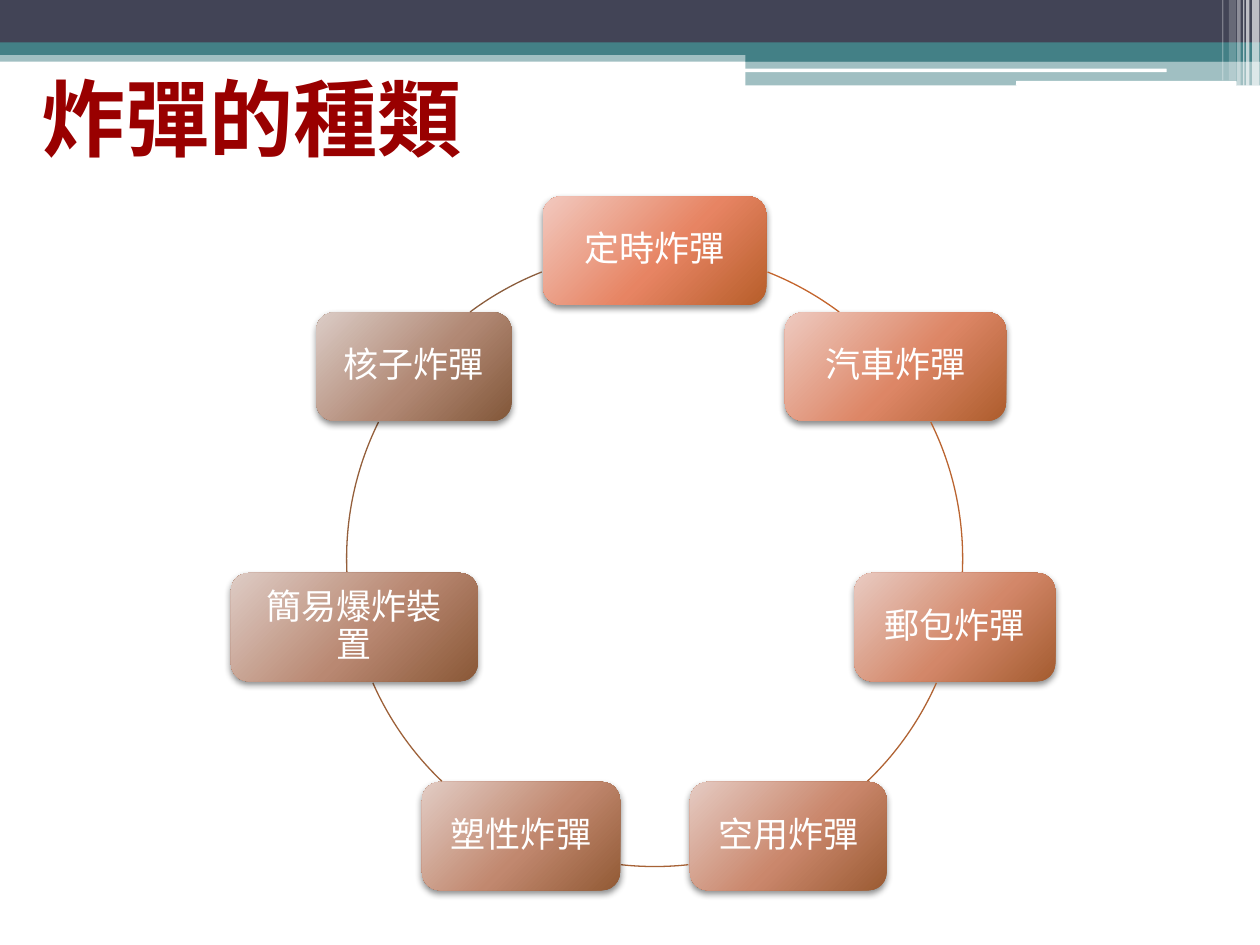
from math import cos, radians, sin

from lxml.etree import SubElement
from pptx import Presentation
from pptx.dml.color import RGBColor
from pptx.enum.shapes import MSO_SHAPE
from pptx.enum.text import MSO_ANCHOR, PP_ALIGN
from pptx.oxml.ns import qn
from pptx.util import Pt

COLORS = {"navy": "424456", "teal": "438086", "white": "FFFFFF", "title": "990000", "shadow": "000000"}
TITLE = "炸彈的種類"

# left, top, width, height, color, opacity in percent
HEADER_BARS = [
    (0, 28.8, 720, 6.5, "teal", 50),
    (0, 0, 720, 24.5, "navy", 100),
    (0, 24.2, 720, 7.2, "teal", 100),
    (426, 28, 294, 7.2, "teal", 100),
    (426, 34.6, 294, 14.2, "teal", 50),
]
HEADER_GAPS = [(425.5, 39.2, 241.2, 2), (580.6, 46.2, 126, 2.8)]
HEADER_STRIPES = [
    (715.5, 0, 4.2, 49, "white", 65),
    (712, 0, 2, 49, "white", 65),
    (710.4, 0, 0.8, 49, "white", 60),
    (707, 0, 2, 49, "white", 40),
    (702.2, 0, 4.2, 46, "white", 20),
    (698.4, 0, 0.8, 46, "white", 30),
]

# text, card width, gradient colors, color of the arc after the card, arc start and end
# (degrees clockwise from the top)
BOMB_TYPES = [
    ("定時炸彈", 127.6, ("F2C9BF", "E78463", "B75E2A"), "C4652D", 21.5, 36.8),
    ("汽車炸彈", 126.4, ("EECAC0", "DD8666", "AD5D2D"), "BA6430", 63.7, 92.5),
    ("郵包炸彈", 114.8, ("E9CBC2", "D38769", "A45C30"), "B06333", 113.8, 136.3),
    ("空用炸彈", 112.4, ("E5CBC3", "CA876C", "9B5B33"), "A66236", 173.7, 186.3),
    ("塑性炸彈", 113.2, ("E2CCC4", "C1886F", "925A35"), "9D6139", 223.7, 246.2),
    ("簡易爆炸裝置", 141.2, ("DECCC5", "B98872", "8A5837"), "945F3B", 267.5, 296.3),
    ("核子炸彈", 111.6, ("DBCCC6", "B18874", "825739"), "8B5D3D", 323.2, 338.5),
]
RING = {"x": 374.1, "y": 319.2, "radius": 176}
CARD_HEIGHT = 62
GRADIENT_STOPS = (0, 55000, 100000)
GRADIENT_FOCUS = {"l": "-40000", "t": "-90000", "r": "140000", "b": "190000"}


def set_format(target, values):
    for name, value in values.items():
        setattr(target, name, value)


def add_color(parent, color, opacity=100):
    element = SubElement(parent, qn("a:srgbClr"), val=color)
    if opacity < 100:
        SubElement(element, qn("a:alpha"), val=str(opacity * 1000))


def add_plain_shape(slide, kind, left, top, width, height):
    """Add a preset shape without shadow or outline."""
    shape = slide.shapes.add_shape(kind, Pt(left), Pt(top), Pt(width), Pt(height))
    shape.shadow.inherit = False
    shape.line.fill.background()
    return shape


def add_bar(slide, left, top, width, height, color, opacity, kind=MSO_SHAPE.RECTANGLE):
    bar = add_plain_shape(slide, kind, left, top, width, height)
    bar.fill.solid()
    bar.fill.fore_color.rgb = RGBColor.from_string(COLORS[color])
    if opacity < 100:
        color_element = bar._element.spPr.find(qn("a:solidFill"))[0]
        SubElement(color_element, qn("a:alpha"), val=str(opacity * 1000))


def write_text(shape, text, frame_format, paragraph_format, font_format, color):
    set_format(shape.text_frame, frame_format)
    paragraph = shape.text_frame.paragraphs[0]
    set_format(paragraph, paragraph_format)
    run = paragraph.add_run()
    run.text = text
    set_format(run.font, font_format)
    run.font.color.rgb = RGBColor.from_string(COLORS[color])
    return run


def add_title(slide):
    box = slide.shapes.add_textbox(Pt(16.6), Pt(33.8), Pt(257), Pt(65.5))
    font = {"name": "Noto Sans CJK SC", "size": Pt(48), "bold": True}
    frame = {"vertical_anchor": MSO_ANCHOR.MIDDLE, "word_wrap": False}
    run = write_text(box, TITLE, frame, {}, font, "title")
    SubElement(run.font._element, qn("a:ea"), typeface=font["name"])


def fill_with_glow(shape, colors):
    """Fill with a round gradient that spreads from above the left edge."""
    shape.fill.gradient()
    gradient = shape._element.spPr.find(qn("a:gradFill"))
    for child in list(gradient):
        gradient.remove(child)
    stops = SubElement(gradient, qn("a:gsLst"))
    for position, color in zip(GRADIENT_STOPS, colors):
        add_color(SubElement(stops, qn("a:gs"), pos=str(position)), color)
    shade = SubElement(gradient, qn("a:path"), {"path": "circle"})
    SubElement(shade, qn("a:fillToRect"), GRADIENT_FOCUS)


def add_drop_shadow(shape):
    effects = shape._element.spPr.find(qn("a:effectLst"))
    shadow = SubElement(effects, qn("a:outerShdw"), blurRad=str(Pt(4)), dist=str(Pt(2)),
                        dir="5400000", rotWithShape="0")
    add_color(shadow, COLORS["shadow"], 45)


def add_card(slide, text, width, colors, angle):
    center_x = RING["x"] + RING["radius"] * sin(radians(angle))
    center_y = RING["y"] - RING["radius"] * cos(radians(angle))
    card = add_plain_shape(slide, MSO_SHAPE.ROUNDED_RECTANGLE, center_x - width / 2,
                           center_y - CARD_HEIGHT / 2, width, CARD_HEIGHT)
    fill_with_glow(card, colors)
    add_drop_shadow(card)
    frame = {"vertical_anchor": MSO_ANCHOR.MIDDLE, "word_wrap": True}
    frame |= {f"margin_{side}": Pt(8.6) for side in ("left", "top", "right", "bottom")}
    write_text(card, text, frame, {"alignment": PP_ALIGN.CENTER, "line_spacing": 0.9},
               {"name": "Cambria", "size": Pt(20)}, "white")


def add_ring_arc(slide, start, end, color):
    radius = RING["radius"]
    arc = add_plain_shape(slide, MSO_SHAPE.ARC, RING["x"] - radius, RING["y"] - radius,
                          2 * radius, 2 * radius)
    arc.fill.background()
    arc.line.color.rgb = RGBColor.from_string(color)
    arc.line.width = Pt(0.75)
    for index, angle in enumerate((start, end)):
        # Preset angles start at the right and count 60000 units to a degree
        arc.adjustments[index] = (angle - 90) % 360 * 0.6


def main():
    presentation = Presentation()
    set_format(presentation, {"slide_width": Pt(720), "slide_height": Pt(540)})
    slide = presentation.slides.add_slide(presentation.slide_layouts[6])
    for bar in HEADER_BARS:
        add_bar(slide, *bar)
    for gap in HEADER_GAPS:
        add_bar(slide, *gap, "white", 100, MSO_SHAPE.ROUNDED_RECTANGLE)
    for stripe in HEADER_STRIPES:
        add_bar(slide, *stripe)
    add_title(slide)
    for index, (text, width, colors, arc_color, start, end) in enumerate(BOMB_TYPES):
        add_card(slide, text, width, colors, index * 360 / len(BOMB_TYPES))
        add_ring_arc(slide, start, end, arc_color)
    presentation.save("out.pptx")


if __name__ == "__main__":
    main()
